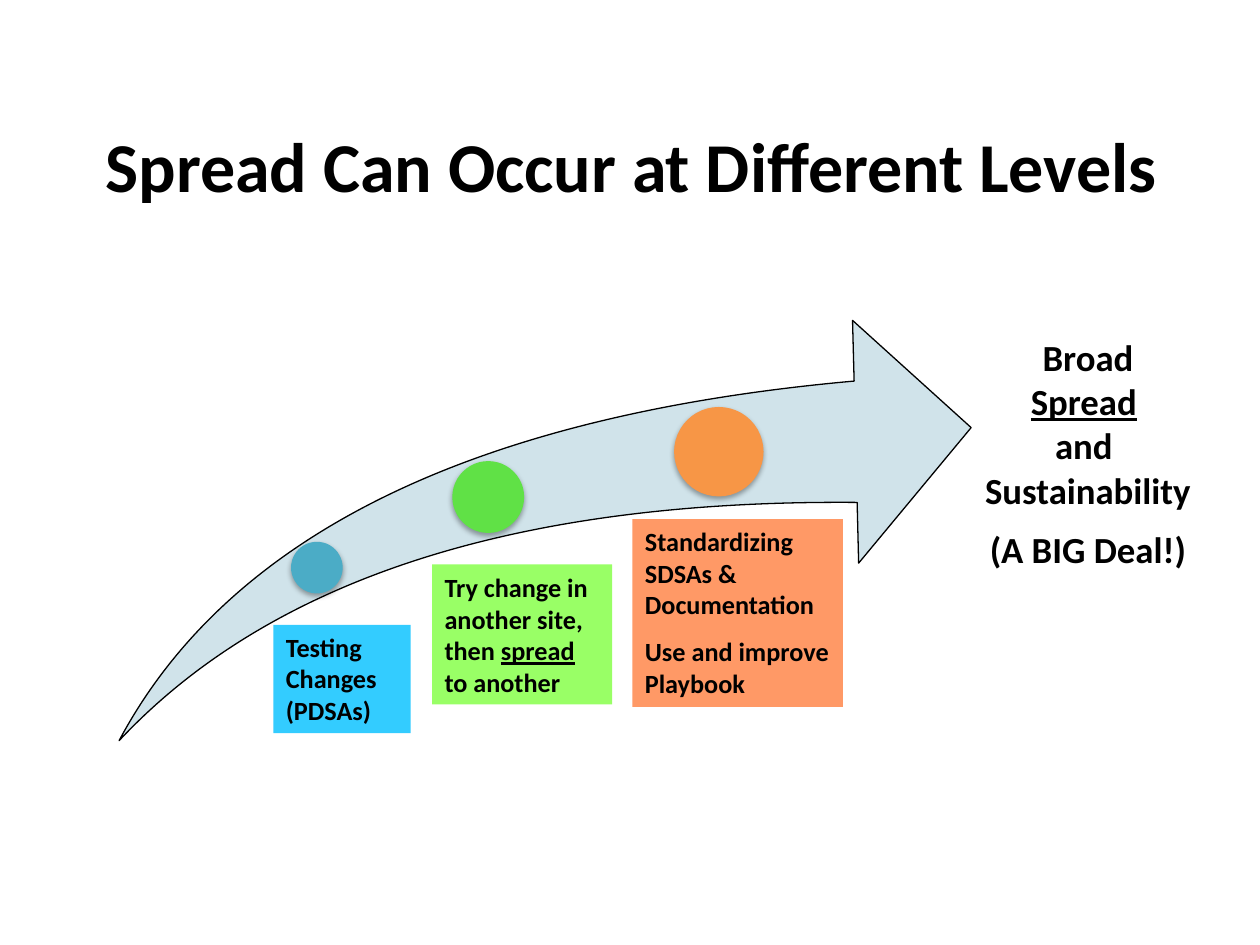
from dataclasses import dataclass

from lxml import etree
from pptx import Presentation
from pptx.dml.color import RGBColor
from pptx.enum.shapes import MSO_SHAPE as Shape
from pptx.enum.text import MSO_ANCHOR as Anchor, MSO_AUTO_SIZE as AutoSize, PP_ALIGN as Align
from pptx.oxml.ns import qn
from pptx.util import Inches, Pt


@dataclass(frozen=True)
class Theme:
    font: str = "Calibri"
    ink: str = "000000"
    arrow: str = "D0E3EA"
    blue_box: str = "33CCFF"
    green_box: str = "99FF66"
    orange_box: str = "FF9966"
    teal_dot: str = "4BACC6"
    green_dot: str = "60E146"
    orange_dot: str = "F79646"
    title_size: float = 40
    outcome_size: float = 21
    label_size: float = 15
    gap: float = 9


def rgb(value):
    return RGBColor.from_string(value)


def write(tf, paragraphs, *, theme, size, align=Align.LEFT, anchor=Anchor.TOP,
          auto_size=AutoSize.SHAPE_TO_FIT_TEXT, gap_before_last=0):
    """Fill a frame; each paragraph is split on "_", every second part being underlined."""
    tf.word_wrap = True
    tf.auto_size = auto_size
    tf.vertical_anchor = anchor
    for i, text in enumerate(paragraphs):
        p = tf.add_paragraph() if i else tf.paragraphs[0]
        p.alignment = align
        if gap_before_last and i == len(paragraphs) - 1:
            p.space_before = Pt(gap_before_last)
        for j, part in enumerate(text.split("_")):
            r = p.add_run()
            r.text = part
            r.font.name, r.font.size, r.font.bold = theme.font, Pt(size), True
            r.font.color.rgb = rgb(theme.ink)
            if j % 2:
                r.font.underline = True


class SlideBuilder:
    def __init__(self, slide, theme):
        self.s, self.theme = slide, theme

    def shape(self, kind, box, fill):
        sp = self.s.shapes.add_shape(kind, *map(Inches, box))
        sp.shadow.inherit = False
        sp.fill.solid()
        sp.fill.fore_color.rgb = rgb(fill)
        sp.line.fill.background()
        return sp

    def title(self, text, box):
        sp = self.s.shapes.title
        sp.left, sp.top, sp.width, sp.height = map(Inches, box)
        write(sp.text_frame, [text], theme=self.theme, size=self.theme.title_size,
              align=Align.CENTER, auto_size=AutoSize.NONE)

    def swoosh(self, box, rotation):
        sp = self.shape(Shape.SWOOSH_ARROW, box, self.theme.arrow)
        sp.rotation = rotation
        sp.adjustments[0] = sp.adjustments[1] = 0.25
        sp.line.color.rgb = rgb(self.theme.ink)
        sp.line.width = Pt(0.75)

    def label(self, paragraphs, box, fill, **text_format):
        sp = self.shape(Shape.RECTANGLE, box, fill)
        write(sp.text_frame, paragraphs, theme=self.theme,
              size=self.theme.label_size, **text_format)

    def dot(self, left, top, diameter, fill):
        sp = self.shape(Shape.OVAL, (left, top, diameter, diameter), fill)
        effects = sp._element.spPr.find(qn("a:effectLst"))
        shadow = etree.SubElement(effects, qn("a:outerShdw"), blurRad=str(Pt(3.1)),
                                  dist=str(Pt(1.8)), dir="5400000", rotWithShape="0")
        color = etree.SubElement(shadow, qn("a:srgbClr"), val=self.theme.ink)
        etree.SubElement(color, qn("a:alpha"), val="35000")

    def text(self, paragraphs, box, **text_format):
        sp = self.s.shapes.add_textbox(*map(Inches, box))
        write(sp.text_frame, paragraphs, theme=self.theme, **text_format)


def main():
    theme = Theme()
    prs = Presentation()
    prs.slide_width, prs.slide_height = Inches(10), Inches(7.5)
    b = SlideBuilder(prs.slides.add_slide(prs.slide_layouts[5]), theme)

    b.title("Spread Can Occur at Different Levels", (0.6, 0.92, 8.82, 0.94))
    b.swoosh((1.1, 2.34, 6.52, 3.83), rotation=5)

    b.label(["Testing Changes (PDSAs)"], (2.17, 4.96, 1.09, 0.86), theme.blue_box)
    b.label(["Try change in another site, then _spread_ to another"],
            (3.43, 4.48, 1.43, 1.11), theme.green_box, anchor=Anchor.MIDDLE)
    b.label(["Standardizing", "SDSAs & Documentation", "Use and improve Playbook"],
            (5.02, 4.12, 1.67, 1.49), theme.orange_box, gap_before_last=theme.gap)

    for left, top, diameter, fill in (
        (2.31, 4.3, 0.41, theme.teal_dot),
        (3.59, 3.66, 0.57, theme.green_dot),
        (5.35, 3.23, 0.71, theme.orange_dot),
    ):
        b.dot(left, top, diameter, fill)

    b.text(["Broad", "_Spread_ ", "and ", "Sustainability", "(A BIG Deal!)"],
           (7.27, 2.61, 2.73, 1.99), size=theme.outcome_size, align=Align.CENTER,
           gap_before_last=theme.gap)

    prs.save("out.pptx")


if __name__ == "__main__":
    main()
